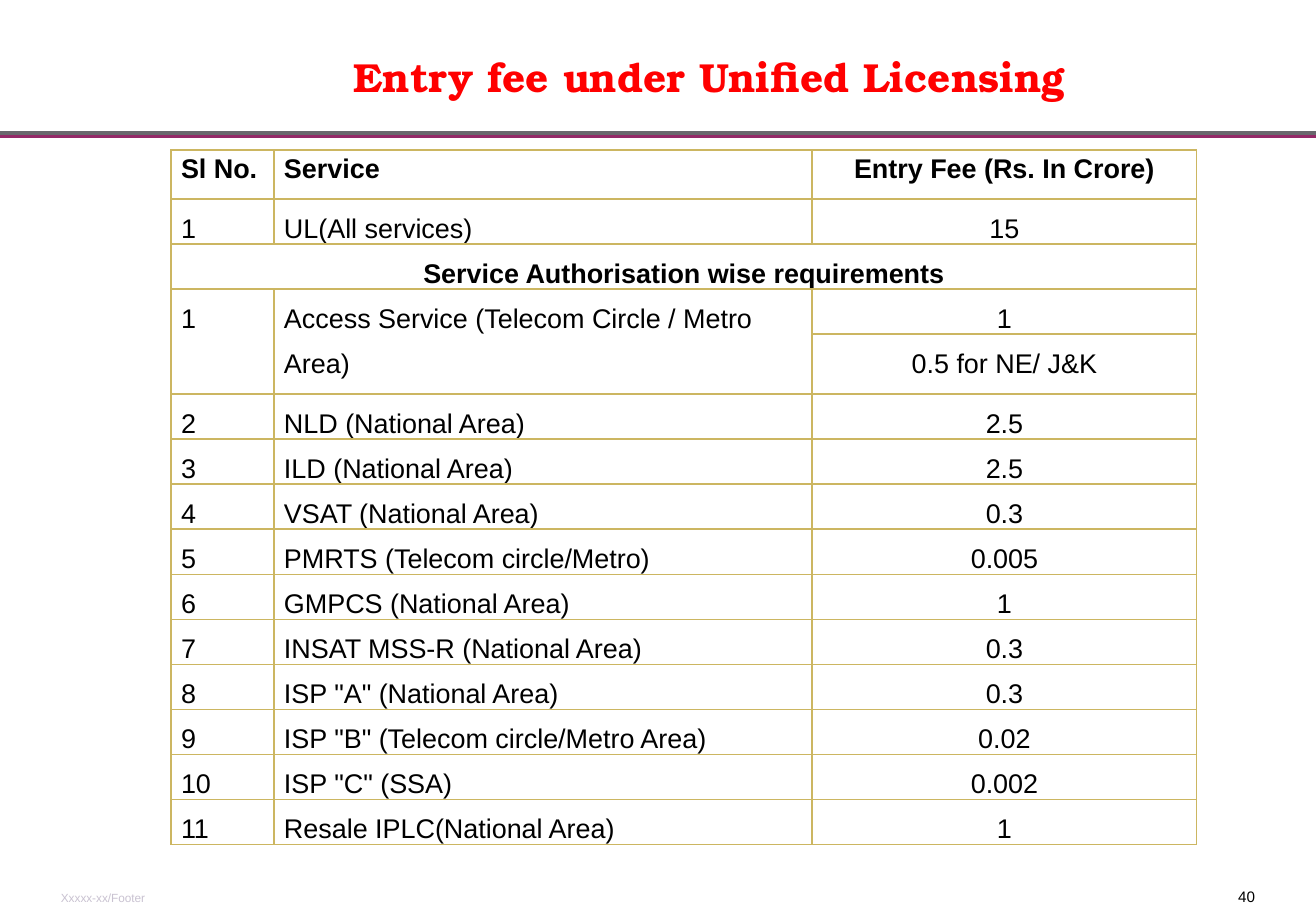
"""Build the slide that lists entry fees under Unified Licensing."""
from pptx import Presentation, util as u
from pptx.dml.color import RGBColor
from pptx.enum import shapes, text
from pptx.oxml import parse_xml
from pptx.oxml.ns import nsdecls

EMU_PER_PX = 7526
BLACK = RGBColor(0x00, 0x00, 0x00)
WHITE = RGBColor(0xFF, 0xFF, 0xFF)
RED = RGBColor(0xFF, 0x00, 0x00)
GREY = RGBColor(0x69, 0x67, 0x6D)
PLUM = RGBColor(0x93, 0x29, 0x68)
GOLD = RGBColor(0xCC, 0xB6, 0x61)
PALE = RGBColor(0xC9, 0xC2, 0xD1)
LEFT, CENTER, RIGHT = text.PP_ALIGN.LEFT, text.PP_ALIGN.CENTER, text.PP_ALIGN.RIGHT
TOP, MIDDLE, BOTTOM = text.MSO_ANCHOR.TOP, text.MSO_ANCHOR.MIDDLE, text.MSO_ANCHOR.BOTTOM

COLUMNS = [103, 538, 385]
HEADER_HEIGHT, ROW_HEIGHT, TALL_HEIGHT = 49, 45, 60
SECTION_ROW, ACCESS_ROW = 2, 3
FEES = [
    ("Sl No.", "Service", "Entry Fee (Rs. In Crore)"),
    ("1", "UL(All services)", "15"),
    ("Service Authorisation wise requirements", "", ""),
    ("1", "Access Service (Telecom Circle / Metro Area)", "1"),
    ("", "", "0.5 for NE/ J&K"),
    ("2", "NLD (National Area)", "2.5"),
    ("3", "ILD (National Area)", "2.5"),
    ("4", "VSAT (National Area)", "0.3"),
    ("5", "PMRTS (Telecom circle/Metro)", "0.005"),
    ("6", "GMPCS (National Area)", "1"),
    ("7", "INSAT MSS-R (National Area)", "0.3"),
    ("8", 'ISP "A" (National Area)', "0.3"),
    ("9", 'ISP "B" (Telecom circle/Metro Area)', "0.02"),
    ("10", 'ISP "C" (SSA)', "0.002"),
    ("11", "Resale IPLC(National Area)", "1"),
]


def px(n):
    """Turn pixels into EMU."""
    return u.Emu(n * EMU_PER_PX)


def write(tf, words, size=16, color=BLACK, font="Arial", bold=False, align=LEFT, spacing=1.0):
    """Write one formatted paragraph into a text frame."""
    p = tf.paragraphs[0]
    p.alignment, p.line_spacing = align, spacing
    r = p.add_run()
    r.text = words
    r.font.size, r.font.name, r.font.bold = u.Pt(size), font, bold
    r.font.color.rgb = color


def set_frame(tf, anchor, margin_y=0):
    """Set wrapping, anchor and insets of a text frame."""
    tf.word_wrap = True
    tf.auto_size = text.MSO_AUTO_SIZE.NONE
    tf.vertical_anchor = anchor
    tf.margin_left = tf.margin_right = 0
    tf.margin_top = tf.margin_bottom = px(margin_y)


def add_title(s, words):
    """Place and fill the title placeholder."""
    sp = s.shapes.title
    sp.left, sp.top, sp.width, sp.height = px(163), px(39), px(1093), px(68)
    set_frame(sp.text_frame, BOTTOM, 6)
    write(sp.text_frame, words, size=24, color=RED, font="TeX Gyre Bonum", bold=True, align=CENTER)


def add_label(s, box, words, anchor=TOP, **fmt):
    """Add a small text box without insets."""
    sp = s.shapes.add_textbox(*map(px, box))
    set_frame(sp.text_frame, anchor)
    write(sp.text_frame, words, **fmt)


def add_rule(s, y, width):
    """Draw the grey rule with its plum shadow."""
    line = s.shapes.add_connector(shapes.MSO_CONNECTOR.STRAIGHT, px(width), px(y), 0, px(y))
    line.line.color.rgb, line.line.width = GREY, u.Pt(2.25)
    line._element.spPr.append(parse_xml(
        f'<a:effectLst {nsdecls("a")}><a:outerShdw blurRad="0" dist="{u.Pt(2)}" dir="5400000" '
        f'algn="ctr" rotWithShape="0"><a:srgbClr val="{PLUM}"/></a:outerShdw></a:effectLst>'))


def style_cell(cell):
    """Give a cell gold borders, a white fill and narrow insets."""
    tc_pr = cell._tc.get_or_add_tcPr()
    for side in "LRTB":
        tc_pr.append(parse_xml(
            f'<a:ln{side} {nsdecls("a")} w="{u.Pt(0.75)}"><a:solidFill>'
            f'<a:srgbClr val="{GOLD}"/></a:solidFill></a:ln{side}>'))
    cell.fill.solid()
    cell.fill.fore_color.rgb = WHITE
    cell.margin_left = cell.margin_right = px(10)
    cell.margin_top = cell.margin_bottom = 0


def add_fee_table(s, left, top):
    """Add the table of services and fees."""
    heights = [HEADER_HEIGHT] + [ROW_HEIGHT] * (len(FEES) - 1)
    heights[ACCESS_ROW + 1] = TALL_HEIGHT
    frame = s.shapes.add_table(len(FEES), len(COLUMNS), px(left), px(top),
                               px(sum(COLUMNS)), px(sum(heights)))
    table = frame.table
    table.first_row = table.horz_banding = False
    for column, width in zip(table.columns, COLUMNS):
        column.width = px(width)
    for i, (row, height, values) in enumerate(zip(table.rows, heights, FEES)):
        row.height = px(height)
        for j, value in enumerate(values):
            style_cell(row.cells[j])
            if value:
                centered = j == 2 or i == SECTION_ROW
                write(row.cells[j].text_frame, value, bold=i in (0, SECTION_ROW),
                      align=CENTER if centered else LEFT, spacing=1.5 if i else 1.15)
    table.cell(SECTION_ROW, 0).merge(table.cell(SECTION_ROW, 2))
    for j in (0, 1):
        table.cell(ACCESS_ROW, j).merge(table.cell(ACCESS_ROW + 1, j))


def main():
    """Build and save the slide."""
    prs = Presentation()
    prs.slide_width, prs.slide_height = px(1316), px(911)
    s = prs.slides.add_slide(prs.slide_layouts[5])
    add_label(s, (1230, 887, 25, 18), "40", size=9, align=RIGHT)
    add_label(s, (61, 890, 90, 15), "Xxxxx-xx/Footer", anchor=MIDDLE, size=7, color=PALE)
    add_rule(s, 133, 1316)
    add_title(s, "Entry fee under Unified Licensing")
    add_fee_table(s, 171, 150)
    prs.save("out.pptx")


if __name__ == "__main__":
    main()
